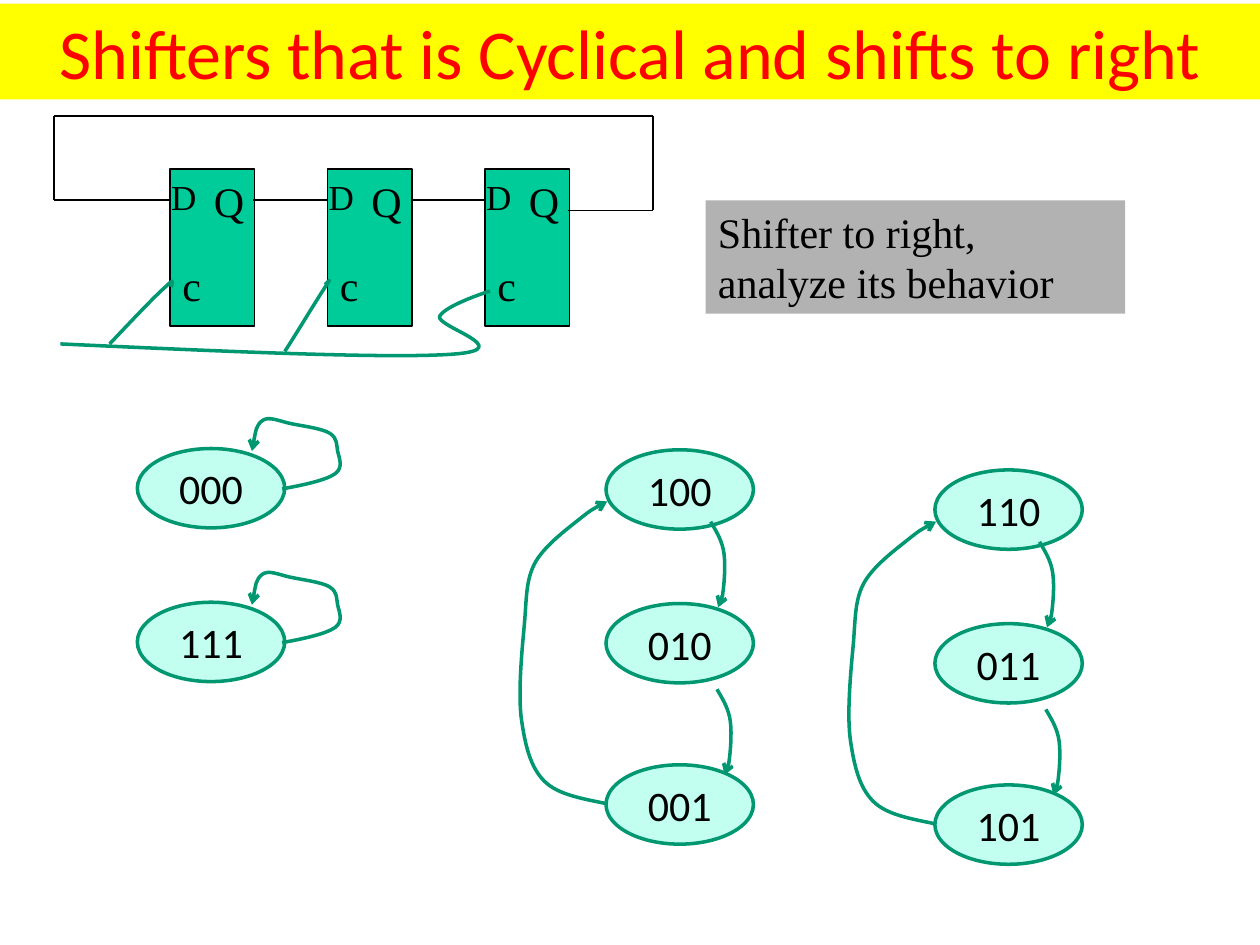
import itertools
from dataclasses import dataclass

import lxml.etree
import pptx
import pptx.dml.color
import pptx.enum.shapes
import pptx.enum.text
import pptx.oxml.ns
import pptx.util

Inches = pptx.util.Inches
Pt = pptx.util.Pt
RGBColor = pptx.dml.color.RGBColor
MSO_SHAPE = pptx.enum.shapes.MSO_SHAPE
MSO_ANCHOR = pptx.enum.text.MSO_ANCHOR
PP_ALIGN = pptx.enum.text.PP_ALIGN
qn = pptx.oxml.ns.qn


@dataclass(frozen=True)
class Theme:
    black = RGBColor.from_string("000000")
    title_fill = RGBColor.from_string("FFFF00")
    title_text = RGBColor.from_string("FF0000")
    flip_flop = RGBColor.from_string("00CC99")
    note = RGBColor.from_string("B2B2B2")
    state = RGBColor.from_string("C2FFF0")
    curve = RGBColor.from_string("009771")
    sans = "Calibri"
    serif = "Times New Roman"
    title_size = Pt(40)
    body_size = Pt(24)
    small_size = Pt(20)
    thin = Pt(1)
    thick = Pt(2)


theme = Theme()


def write_text(shape, text, font=theme.sans, size=theme.body_size, color=theme.black,
               align=PP_ALIGN.LEFT, anchor=MSO_ANCHOR.TOP):
    frame = shape.text_frame
    frame.word_wrap = True
    frame.vertical_anchor = anchor
    paragraph = frame.paragraphs[0]
    paragraph.alignment = align
    run = paragraph.add_run()
    run.text = text
    run.font.name = font
    run.font.size = size
    run.font.color.rgb = color


def draw_curve(points, origin=(0, 0), arrow=False):
    """Draw a start point followed by Bezier triples, all relative to origin."""
    start, *rest = [(Inches(origin[0] + x), Inches(origin[1] + y)) for x, y in points]
    builder = slide.shapes.build_freeform(*start)
    builder.add_line_segments(rest, close=False)
    shape = builder.convert_to_shape()
    shape.shadow.inherit = False
    shape.fill.background()
    shape.line.color.rgb = theme.curve
    shape.line.width = theme.thick
    properties = shape._element.spPr
    outline = next(properties.iter(qn("a:path")))
    segments = outline.findall(qn("a:lnTo"))
    for first in range(0, len(segments), 3):
        bezier = lxml.etree.SubElement(outline, qn("a:cubicBezTo"))
        for segment in segments[first:first + 3]:
            bezier.append(segment[0])
            outline.remove(segment)
    if arrow:
        lxml.etree.SubElement(properties.find(qn("a:ln")), qn("a:tailEnd"), type="arrow")


presentation = pptx.Presentation()
presentation.slide_width = Inches(10)
presentation.slide_height = Inches(7.5)
slide = presentation.slides.add_slide(presentation.slide_layouts[6])

# Title bar and note
title = slide.shapes.add_shape(MSO_SHAPE.RECTANGLE, 0, Inches(0.03), Inches(10), Inches(0.76))
write_text(title, "Shifters that is Cyclical and shifts to right", size=theme.title_size,
           color=theme.title_text, align=PP_ALIGN.CENTER, anchor=MSO_ANCHOR.MIDDLE)
note = slide.shapes.add_shape(MSO_SHAPE.RECTANGLE, Inches(5.6), Inches(1.59),
                              Inches(3.33), Inches(0.9))
write_text(note, "Shifter to right, analyze its behavior", font=theme.serif)
for panel, color in ((title, theme.title_fill), (note, theme.note)):
    panel.shadow.inherit = False
    panel.fill.solid()
    panel.fill.fore_color.rgb = color
    panel.line.fill.background()

# Flip-flops: pin name, offset from the body, box size, type size
pins = [("D", -0.09, 0, 0.33, 0.43, theme.small_size),
        ("Q", 0.25, 0, 0.5, 0.5, theme.body_size),
        ("c", 0, 0.67, 0.5, 0.5, theme.body_size)]
flip_flop_top = 1.34
for index in range(3):
    left = 1.35 + 1.25 * index
    group = slide.shapes.add_group_shape()
    body = group.shapes.add_shape(MSO_SHAPE.RECTANGLE, Inches(left), Inches(flip_flop_top),
                                  Inches(0.67), Inches(1.25))
    body.shadow.inherit = False
    body.fill.solid()
    body.fill.fore_color.rgb = theme.flip_flop
    body.line.color.rgb = theme.black
    body.line.width = theme.thin
    for name, dx, dy, width, height, size in pins:
        label = group.shapes.add_textbox(Inches(left + dx), Inches(flip_flop_top + dy),
                                         Inches(width), Inches(height))
        write_text(label, name, font=theme.serif, size=size)

# Data wires: two links and the feedback loop
wires = [[(2.01, 1.59), (2.6, 1.59)],
         [(3.26, 1.59), (3.85, 1.59)],
         [(4.51, 1.67), (5.18, 1.67), (5.18, 0.92), (0.43, 0.92), (0.43, 1.59), (1.35, 1.59)]]
for wire in wires:
    for start, end in itertools.pairwise(wire):
        connector = slide.shapes.add_connector(
            pptx.enum.shapes.MSO_CONNECTOR.STRAIGHT, *map(Inches, start + end))
        connector.line.color.rgb = theme.black
        connector.line.width = theme.thin
        lxml.etree.SubElement(connector._element.spPr, qn("a:effectLst"))

# Clock wires
draw_curve([(0.48, 2.73), (1.79, 2.79), (3.11, 2.85), (3.61, 2.81),
            (4.12, 2.77), (3.45, 2.59), (3.49, 2.51), (3.54, 2.42), (3.89, 2.31), (3.89, 2.31)])
draw_curve([(2.26, 2.79), (2.37, 2.62), (2.47, 2.45), (2.58, 2.28),
            (2.64, 2.19), (2.61, 2.23), (2.58, 2.26)])
draw_curve([(0.87, 2.73), (1.05, 2.54), (1.23, 2.35), (1.31, 2.28),
            (1.39, 2.2), (1.37, 2.24), (1.36, 2.28)])

# State diagrams: origin and states of each cycle, from top to bottom
self_loop = [(1.15, 0.32), (1.32, 0.29), (1.5, 0.25), (1.57, 0.2),
             (1.64, 0.15), (1.6, 0.07), (1.59, 0.02), (1.58, -0.03), (1.59, -0.08), (1.53, -0.12),
             (1.47, -0.16), (1.3, -0.18), (1.21, -0.2), (1.12, -0.22), (1.04, -0.26), (0.99, -0.22),
             (0.94, -0.18), (0.93, -0.08), (0.91, 0.02)]
step_down = [(0, 0), (0.04, 0.07), (0.08, 0.13), (0.1, 0.22),
             (0.12, 0.31), (0.11, 0.46), (0.1, 0.54), (0.09, 0.62), (0.08, 0.65), (0.06, 0.68)]
return_up = [(0.01, 2.81), (-0.18, 2.77), (-0.38, 2.74), (-0.49, 2.63),
             (-0.6, 2.52), (-0.64, 2.35), (-0.67, 2.15), (-0.7, 1.95), (-0.67, 1.62), (-0.65, 1.41),
             (-0.63, 1.2), (-0.64, 1.05), (-0.57, 0.91), (-0.5, 0.77), (-0.31, 0.63), (-0.21, 0.55),
             (-0.11, 0.47), (-0.05, 0.44), (0.01, 0.41)]
cycles = [(1.09, 3.56, ["000"]), (1.09, 4.78, ["111"]),
          (4.81, 3.57, ["100", "010", "001"]), (7.42, 3.73, ["110", "011", "101"])]
state_offsets = [0, 1.22, 2.5]
for left, top, states in cycles:
    for state, offset in zip(states, state_offsets):
        ellipse = slide.shapes.add_shape(MSO_SHAPE.OVAL, Inches(left), Inches(top + offset),
                                         Inches(1.17), Inches(0.63))
        ellipse.shadow.inherit = False
        ellipse.fill.solid()
        ellipse.fill.fore_color.rgb = theme.state
        ellipse.line.color.rgb = theme.curve
        ellipse.line.width = theme.thick
        write_text(ellipse, state, align=PP_ALIGN.CENTER, anchor=MSO_ANCHOR.MIDDLE)
    if len(states) == 1:
        draw_curve(self_loop, (left, top), arrow=True)
    else:
        draw_curve(step_down, (left + 0.83, top + 0.57), arrow=True)
        draw_curve(step_down, (left + 0.88, top + 1.9), arrow=True)
        draw_curve(return_up, (left, top), arrow=True)

presentation.save("out.pptx")
